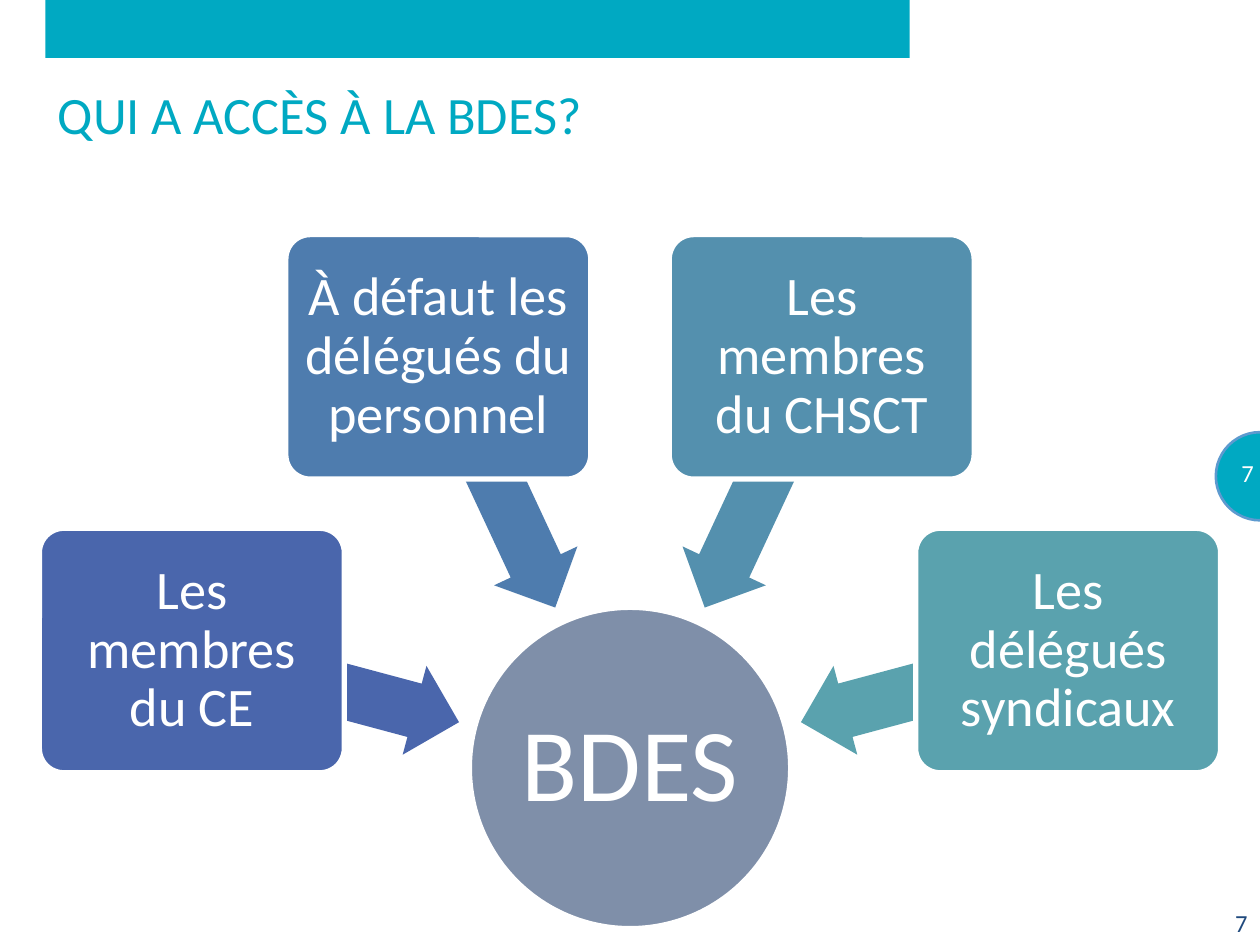
from dataclasses import dataclass
from math import cos, radians, sin

from pptx import Presentation
from pptx.dml.color import RGBColor
from pptx.enum.shapes import MSO_SHAPE as Shape
from pptx.enum.text import MSO_ANCHOR as Anchor, PP_ALIGN as Align
from pptx.util import Inches, Pt

WIDTH, HEIGHT = 10, 7.5


@dataclass(frozen=True)
class Theme:
    font: str = "Calibri"
    accent: str = "00A9C2"
    badge_line: str = "5D9ACF"
    white: str = "FFFFFF"
    navy: str = "1F497D"
    hub: str = "7F8FA9"
    title_size: int = 30
    number_size: int = 14
    hub_size: int = 59
    box_size: int = 31
    outline: float = 3
    badge_outline: float = 1.5


THEME = Theme()

# Centres and sizes are percentages of the slide's width and height.
HUB_CENTRE = (50, 81.27)
HUB_SIZE = (25.5, 34)
BOX_SIZE = (24.2, 25.87)
ARROW_SIZE = (22, 9.73)
BOX_ORBIT, ARROW_ORBIT = 36, 25.05
FIRST_ANGLE, ANGLE_STEP = 15, 50

GROUPS = [
    ("Les membres du CE", "4A66AC"),
    ("À défaut les délégués du personnel", "4E7CAE"),
    ("Les membres du CHSCT", "5490AE"),
    ("Les délégués syndicaux", "5AA2AE"),
]


def colour(code):
    return RGBColor.from_string(code)


def frame(left, top, width, height):
    """Turn percentages of the slide's size into lengths."""
    return (Inches(left * WIDTH / 100), Inches(top * HEIGHT / 100),
            Inches(width * WIDTH / 100), Inches(height * HEIGHT / 100))


def centred(centre, size):
    return tuple(c - s / 2 for c, s in zip(centre, size)) + size


def orbit(radius, angle):
    """Point on a true circle round the hub; 0 degrees is left, 90 is up."""
    x, y = HUB_CENTRE
    turn = radians(angle)
    return x - radius * cos(turn), y - radius * sin(turn) * WIDTH / HEIGHT


def add_shape(page, kind, place, fill, line=None, line_width=0):
    shape = page.shapes.add_shape(kind, *frame(*place))
    shape.shadow.inherit = False
    shape.fill.solid()
    shape.fill.fore_color.rgb = colour(fill)
    if line:
        shape.line.color.rgb = colour(line)
        shape.line.width = Pt(line_width)
    else:
        shape.line.fill.background()
    return shape


def write(shape, text, size, ink, align=Align.LEFT, anchor=Anchor.MIDDLE,
          margin=None, spacing=None):
    box = shape.text_frame
    box.word_wrap = True
    box.vertical_anchor = anchor
    if margin is not None:
        box.margin_left = box.margin_right = Inches(margin)
        box.margin_top = box.margin_bottom = Inches(margin)
    para = box.paragraphs[0]
    para.alignment = align
    if spacing:
        para.line_spacing = spacing
    span = para.add_run()
    span.text = text
    span.font.name = THEME.font
    span.font.size = Pt(size)
    span.font.color.rgb = colour(ink)


def add_text(page, place, text, size, ink, **layout):
    write(page.shapes.add_textbox(*frame(*place)), text, size, ink, **layout)


def add_header(page):
    add_shape(page, Shape.RECTANGLE, (3.6, 0, 68.6, 6.13), THEME.accent)
    add_text(page, (3.6, 8, 92.9, 10.27), "QUI A ACCÈS À LA BDES?",
             THEME.title_size, THEME.accent, anchor=Anchor.TOP)


def add_page_numbers(page):
    add_shape(page, Shape.OVAL, (96.5, 45.73, 7, 9.33), THEME.accent,
              THEME.badge_line, THEME.badge_outline)
    for place, ink in (((96.2, 47.33, 4.3, 5.33), THEME.white),
                       ((88.3, 95.2, 11.7, 4.8), THEME.navy)):
        add_text(page, place, "7", THEME.number_size, ink, align=Align.RIGHT)


def add_hub(page):
    hub = add_shape(page, Shape.OVAL, centred(HUB_CENTRE, HUB_SIZE),
                    THEME.hub, THEME.white, THEME.outline)
    write(hub, "BDES", THEME.hub_size, THEME.white, align=Align.CENTER,
          margin=0.04, spacing=0.9)


def add_group(page, text, fill, angle):
    """Add one box round the hub, with the arrow from it to the hub."""
    arrow = add_shape(page, Shape.LEFT_ARROW,
                      centred(orbit(ARROW_ORBIT, angle), ARROW_SIZE), fill)
    arrow.adjustments[0], arrow.adjustments[1] = 0.6, 0.5
    arrow.rotation = 180 + angle
    box = add_shape(page, Shape.ROUNDED_RECTANGLE,
                    centred(orbit(BOX_ORBIT, angle), BOX_SIZE),
                    fill, THEME.white, THEME.outline)
    box.adjustments[0] = 0.1
    write(box, text, THEME.box_size, THEME.white, align=Align.CENTER,
          margin=0.06, spacing=0.9)


def main():
    deck = Presentation()
    deck.slide_width, deck.slide_height = Inches(WIDTH), Inches(HEIGHT)
    page = deck.slides.add_slide(deck.slide_layouts[6])
    add_header(page)
    add_page_numbers(page)
    add_hub(page)
    for index, (text, fill) in enumerate(GROUPS):
        add_group(page, text, fill, FIRST_ANGLE + index * ANGLE_STEP)
    deck.save("out.pptx")


if __name__ == "__main__":
    main()
